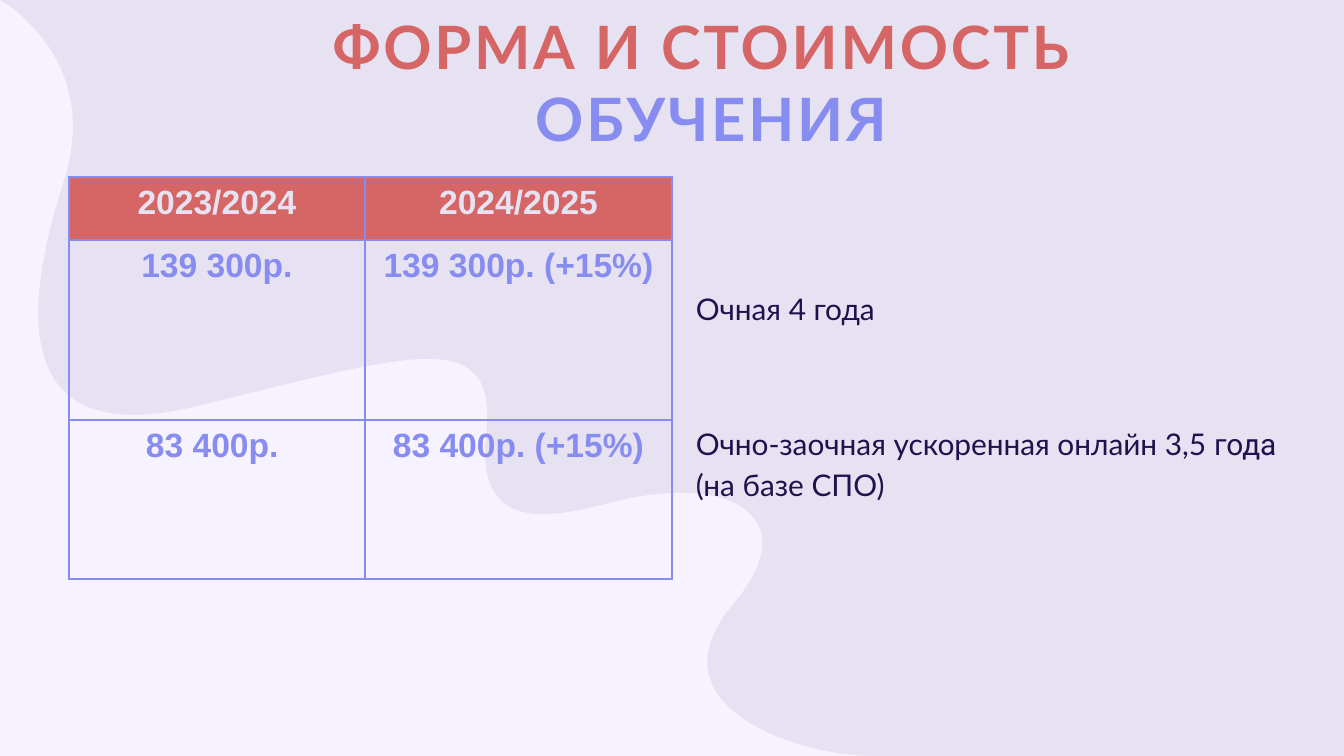
from lxml.etree import SubElement
from pptx import Presentation
from pptx.dml.color import RGBColor
from pptx.enum.text import MSO_ANCHOR, PP_ALIGN
from pptx.oxml.ns import qn
from pptx.util import Cm, Pt

LAVENDER = RGBColor(0xE7, 0xE2, 0xF2)
PALE = RGBColor(0xF6, 0xF2, 0xFF)
CORAL = RGBColor(0xD6, 0x65, 0x65)
PERIWINKLE = RGBColor(0x87, 0x8C, 0xF0)
NAVY = RGBColor(0x20, 0x12, 0x4D)

WIDTH, HEIGHT = 25.4, 14.29

# Wave segments in centimetres: one point is a straight line,
# three points are a curve (two control points and an end point)
WAVE_START = (1.22, 3.38)
WAVE_SEGMENTS = [
    [(0.66, 5.13), (-0.2, 8.59), (3.63, 7.7)],
    [(7.57, 6.76), (9.42, 6.05), (9.19, 8.18)],
    [(8.97, 10.13), (10.44, 9.78), (11.56, 9.5)],
    [(12.45, 9.25), (14, 9.14), (14.35, 9.98)],
    [(14.5, 10.31), (14.38, 10.8), (13.82, 11.46)],
    [(12.27, 13.36), (15.09, HEIGHT), (16.48, HEIGHT)],
    [(0, HEIGHT)],
    [(0, 0)],
    [(0, 0), (1.93, 1.07), WAVE_START],
]

PRICES = [
    ["2023/2024", "2024/2025"],
    ["139 300р.", "139 300р. (+15%)"],
    ["83 400р. ", "83 400р. (+15%)"],
]
COLUMN_WIDTHS = [5.6, 5.8]
ROW_HEIGHTS = [1.19, 3.4, 3]


def add_run(paragraph, text, font="Lato", size=16, color=NAVY, bold=False, spacing=None):
    run = paragraph.add_run()
    run.text = text
    run.font.name = font
    run.font.size = Pt(size)
    run.font.bold = bold
    run.font.color.rgb = color
    if spacing is not None:
        run.font._element.set("spc", str(int(spacing * 100)))


def add_borders(cell, color, width):
    properties = cell._tc.get_or_add_tcPr()
    for index, side in enumerate(("a:lnL", "a:lnR", "a:lnT", "a:lnB")):
        line = properties.makeelement(qn(side), {"w": str(Pt(width))})
        fill = SubElement(line, qn("a:solidFill"))
        SubElement(fill, qn("a:srgbClr"), val=str(color))
        properties.insert(index, line)


def bend_segments(shape, segments):
    """Turn each run of three straight segments into one cubic curve."""
    lines = iter(list(shape._element.iter(qn("a:lnTo"))))
    for segment in segments:
        first, *others = [next(lines) for _ in segment]
        if others:
            first.tag = qn("a:cubicBezTo")
            for line in others:
                first.append(line[0])
                line.getparent().remove(line)


class SlideBuilder:
    def __init__(self, slide, background):
        self.slide = slide
        fill = slide.background.fill
        fill.solid()
        fill.fore_color.rgb = background

    def curved_shape(self, start, segments, color):
        builder = self.slide.shapes.build_freeform(Cm(start[0]), Cm(start[1]))
        points = [(Cm(x), Cm(y)) for segment in segments for x, y in segment]
        builder.add_line_segments(points, close=True)
        shape = builder.convert_to_shape()
        bend_segments(shape, segments)
        shape.shadow.inherit = False
        shape.fill.solid()
        shape.fill.fore_color.rgb = color
        shape.line.fill.background()

    def text_frame(self, left, top, width, height, anchor, margin_top=0.25):
        shape = self.slide.shapes.add_textbox(Cm(left), Cm(top), Cm(width), Cm(height))
        frame = shape.text_frame
        frame.word_wrap = True
        frame.vertical_anchor = anchor
        frame.margin_left = frame.margin_right = frame.margin_bottom = Cm(0.25)
        frame.margin_top = Cm(margin_top)
        return frame

    def table(self, left, top, rows):
        table = self.slide.shapes.add_table(
            len(rows), len(rows[0]), Cm(left), Cm(top),
            Cm(sum(COLUMN_WIDTHS)), Cm(sum(ROW_HEIGHTS))).table
        table.horz_banding = False
        for column, width in zip(table.columns, COLUMN_WIDTHS):
            column.width = Cm(width)
        for row, height, texts in zip(table.rows, ROW_HEIGHTS, rows):
            row.height = Cm(height)
            header = texts is rows[0]
            for cell, text in zip(row.cells, texts):
                if header:
                    cell.fill.solid()
                    cell.fill.fore_color.rgb = CORAL
                else:
                    cell.fill.background()
                add_borders(cell, PERIWINKLE, 1)
                paragraph = cell.text_frame.paragraphs[0]
                paragraph.alignment = PP_ALIGN.CENTER
                add_run(paragraph, text, font="Arial", size=18, bold=True,
                        color=LAVENDER if header else PERIWINKLE)


def main():
    presentation = Presentation()
    presentation.slide_width = Cm(WIDTH)
    presentation.slide_height = Cm(HEIGHT)
    slide = presentation.slides.add_slide(presentation.slide_layouts[6])
    builder = SlideBuilder(slide, LAVENDER)

    builder.curved_shape(WAVE_START, WAVE_SEGMENTS, PALE)

    title = builder.text_frame(2.91, 1.55, 21.06, 1.6, MSO_ANCHOR.BOTTOM).paragraphs[0]
    title.alignment = PP_ALIGN.CENTER
    title_format = {"size": 32, "bold": True, "spacing": 1.5}
    add_run(title, "ФОРМА И СТОИМОСТЬ ", color=CORAL, **title_format)
    title.add_line_break()
    add_run(title, "ОБУЧЕНИЯ", color=PERIWINKLE, **title_format)

    forms = builder.text_frame(12.9, 3.35, 12.27, 7.59, MSO_ANCHOR.TOP, margin_top=2.14)
    add_run(forms.paragraphs[0], "Очная 4 года")
    online = forms.add_paragraph()
    online.space_before = Pt(50.5)
    online.line_spacing = 1.15
    add_run(online, "Очно-заочная ускоренная онлайн 3,5 ")
    add_run(online, "года ", font="Roboto")
    add_run(online, "(на базе СПО)")

    builder.table(1.3, 3.35, PRICES)
    presentation.save("out.pptx")


if __name__ == "__main__":
    main()
